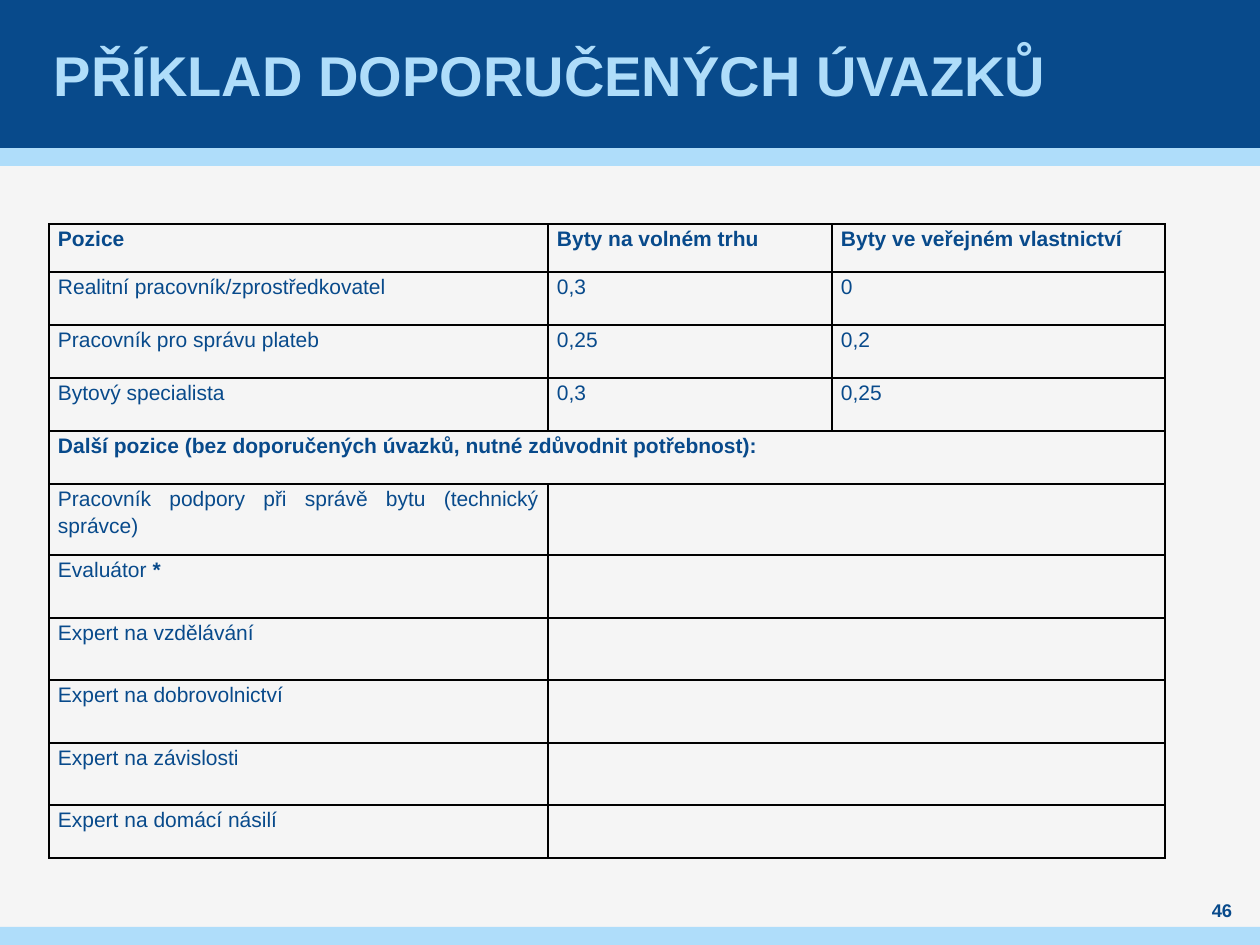
from dataclasses import dataclass

import lxml.etree
import pptx
import pptx.dml.color
import pptx.enum.shapes
import pptx.enum.text
import pptx.oxml.ns
import pptx.util

EMU_PER_PX = 914400 / 126
ALIGN = pptx.enum.text.PP_ALIGN
MIDDLE = pptx.enum.text.MSO_ANCHOR.MIDDLE


@dataclass(frozen=True)
class Theme:
    font: str = "Arial"
    background: str = "F5F5F5"
    dark: str = "084A8B"
    light: str = "AFDDFA"
    border: str = "000000"
    title_size: float = 32
    table_size: float = 12
    number_size: float = 10.5
    border_width: float = 1


@dataclass(frozen=True)
class Box:
    left: int
    top: int
    width: int
    height: int

    def emu(self) -> tuple:
        return tuple(px(v) for v in (self.left, self.top, self.width, self.height))


@dataclass(frozen=True)
class Band:
    box: Box
    color: str


@dataclass(frozen=True)
class Label:
    box: Box
    text: str
    size: float
    color: str
    align: ALIGN
    inset: int = 0


@dataclass(frozen=True)
class Row:
    height: int
    texts: tuple
    bold: bool = False
    bold_suffix: str = ""


THEME = Theme()
BANDS = (
    Band(Box(0, 148, 1260, 18), THEME.light),
    Band(Box(0, 0, 1260, 148), THEME.dark),
    Band(Box(0, 927, 1260, 18), THEME.light),
)
LABELS = (
    Label(Box(49, 0, 1160, 148), "PŘÍKLAD DOPORUČENÝCH ÚVAZKŮ",
          THEME.title_size, THEME.light, ALIGN.LEFT, 5),
    Label(Box(1190, 898, 64, 25), "46", THEME.number_size, THEME.dark, ALIGN.CENTER),
)
TABLE_LEFT, TABLE_TOP = 49, 224
COLUMN_WIDTHS = (499, 284, 333)
CELL_INSET = 9
ROWS = (
    Row(48, ("Pozice", "Byty na volném trhu", "Byty ve veřejném vlastnictví"), bold=True),
    Row(53, ("Realitní pracovník/zprostředkovatel", "0,3", "0")),
    Row(53, ("Pracovník pro správu plateb", "0,25", "0,2")),
    Row(53, ("Bytový specialista", "0,3", "0,25")),
    Row(53, ("Další pozice (bez doporučených úvazků, nutné zdůvodnit potřebnost):",), bold=True),
    Row(71, ("Pracovník podpory při správě bytu (technický správce)", "")),
    Row(63, ("Evaluátor ", ""), bold_suffix="*"),
    Row(62, ("Expert na vzdělávání", "")),
    Row(63, ("Expert na dobrovolnictví", "")),
    Row(62, ("Expert na závislosti", "")),
    Row(53, ("Expert na domácí násilí", "")),
)


def px(value: int) -> int:
    return round(value * EMU_PER_PX)


def rgb(color: str) -> pptx.dml.color.RGBColor:
    return pptx.dml.color.RGBColor.from_string(color)


def style_run(run, size: float, color: str, bold: bool) -> None:
    run.font.name = THEME.font
    run.font.size = pptx.util.Pt(size)
    run.font.bold = bold
    run.font.color.rgb = rgb(color)


def draw_band(slide, band: Band) -> None:
    shape = slide.shapes.add_shape(pptx.enum.shapes.MSO_SHAPE.RECTANGLE, *band.box.emu())
    shape.shadow.inherit = False
    shape.fill.solid()
    shape.fill.fore_color.rgb = rgb(band.color)
    shape.line.fill.background()


def draw_label(slide, label: Label) -> None:
    text_frame = slide.shapes.add_textbox(*label.box.emu()).text_frame
    text_frame.word_wrap = True
    text_frame.vertical_anchor = MIDDLE
    text_frame.margin_left = text_frame.margin_right = px(label.inset)
    text_frame.margin_top = text_frame.margin_bottom = 0
    text_frame.text = label.text
    paragraph = text_frame.paragraphs[0]
    paragraph.alignment = label.align
    style_run(paragraph.runs[0], label.size, label.color, True)


def style_cell(cell) -> None:
    cell.margin_left = cell.margin_right = px(CELL_INSET)
    cell.margin_top = cell.margin_bottom = 0
    properties = cell._tc.get_or_add_tcPr()
    qn = pptx.oxml.ns.qn
    for side in ("a:lnL", "a:lnR", "a:lnT", "a:lnB"):
        line = lxml.etree.SubElement(
            properties, qn(side), w=str(pptx.util.Pt(THEME.border_width)))
        fill = lxml.etree.SubElement(line, qn("a:solidFill"))
        lxml.etree.SubElement(fill, qn("a:srgbClr"), val=THEME.border)
    cell.fill.background()


def write_cell(cell, text: str, bold: bool, bold_suffix: str) -> None:
    paragraph = cell.text_frame.paragraphs[0]
    paragraph.text = text
    paragraph.alignment = ALIGN.JUSTIFY
    paragraph.line_spacing = 1.15
    paragraph.space_after = pptx.util.Pt(3)
    if bold_suffix:
        paragraph.add_run().text = bold_suffix
    for index, run in enumerate(paragraph.runs):
        style_run(run, THEME.table_size, THEME.dark, bold or index > 0)


def draw_table(slide) -> None:
    box = Box(TABLE_LEFT, TABLE_TOP, sum(COLUMN_WIDTHS), sum(row.height for row in ROWS))
    table = slide.shapes.add_table(len(ROWS), len(COLUMN_WIDTHS), *box.emu()).table
    table.first_row = table.horz_banding = False
    for column, width in zip(table.columns, COLUMN_WIDTHS):
        column.width = px(width)
    last = len(COLUMN_WIDTHS) - 1
    for row_index, row in enumerate(ROWS):
        table.rows[row_index].height = px(row.height)
        for column_index in range(len(COLUMN_WIDTHS)):
            style_cell(table.cell(row_index, column_index))
        final = len(row.texts) - 1
        if final < last:
            table.cell(row_index, final).merge(table.cell(row_index, last))
        for column_index, text in enumerate(row.texts):
            if text:
                suffix = row.bold_suffix if column_index == 0 else ""
                write_cell(table.cell(row_index, column_index), text, row.bold, suffix)


def main() -> None:
    presentation = pptx.Presentation()
    presentation.slide_width = px(1260)
    presentation.slide_height = px(945)
    slide = presentation.slides.add_slide(presentation.slide_layouts[6])
    slide.background.fill.solid()
    slide.background.fill.fore_color.rgb = rgb(THEME.background)
    for band in BANDS:
        draw_band(slide, band)
    for label in LABELS:
        draw_label(slide, label)
    draw_table(slide)
    presentation.save("out.pptx")


if __name__ == "__main__":
    main()
